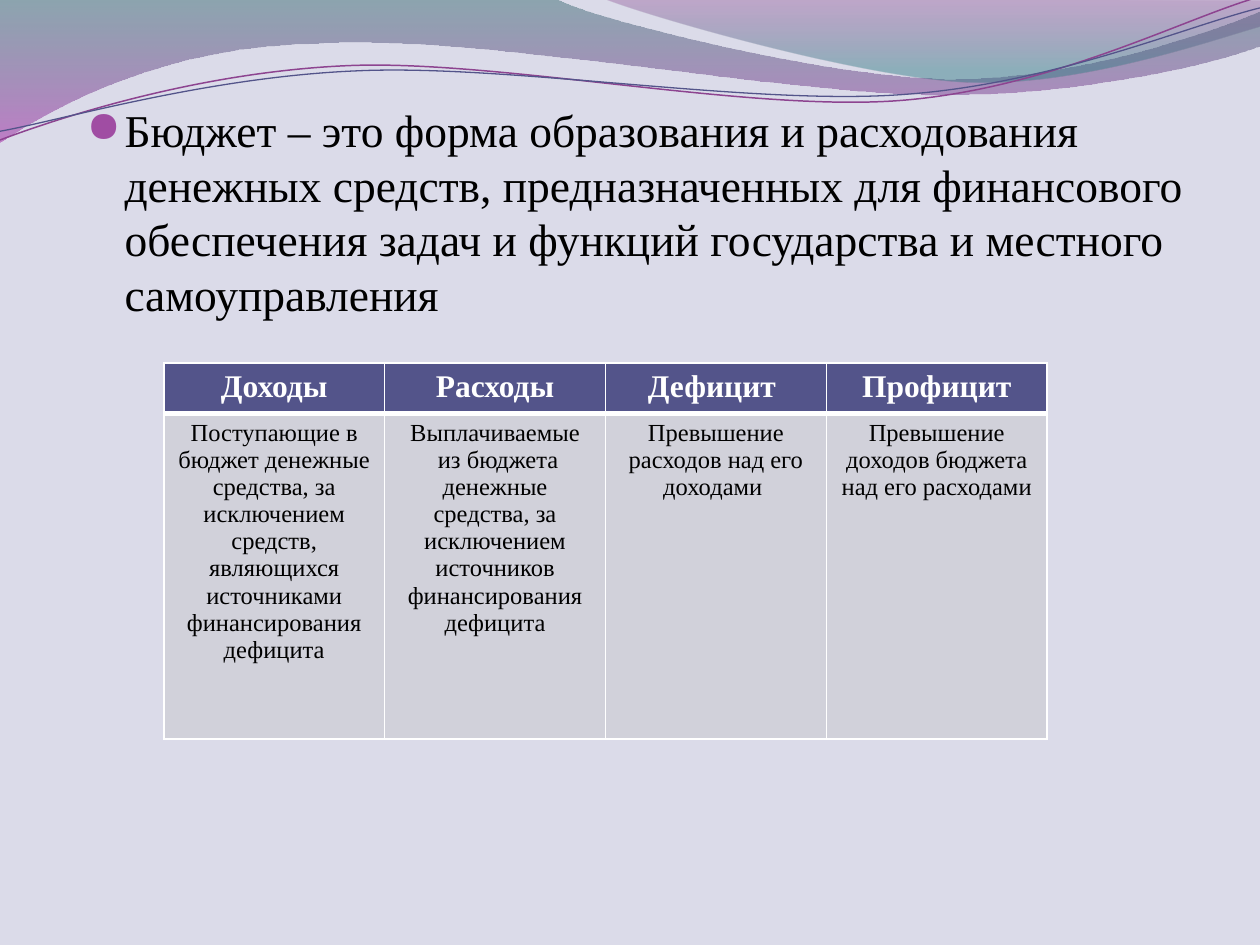
"""Build a slide that defines a budget and tabulates its four key terms."""
from itertools import islice

from pptx import Presentation
from pptx.dml.color import RGBColor
from pptx.enum.text import PP_ALIGN
from pptx.oxml.ns import qn
from pptx.oxml.xmlchemy import OxmlElement
from pptx.util import Pt

CENTER = PP_ALIGN.CENTER
FONT = "Times New Roman"
BACKGROUND, WHITE, BLACK = "DBDBE9", "FFFFFF", "000000"
HEADER_FILL, BODY_FILL, BULLET = "53548A", "D1D1DA", "A04DA3"

DEFINITION = (
    "Бюджет – это форма образования и расходования денежных средств, "
    "предназначенных для финансового обеспечения задач и функций "
    "государства и местного самоуправления"
)
TERMS = [
    ("Доходы", "Поступающие в бюджет денежные средства, за исключением средств, "
               "являющихся источниками финансирования дефицита"),
    ("Расходы", "Выплачиваемые\n из бюджета денежные средства, за исключением "
                "источников финансирования дефицита"),
    ("Дефицит ", "Превышение расходов над его доходами "),
    ("Профицит", "Превышение доходов бюджета над его расходами"),
]
TABLE_LEFT, TABLE_TOP, COLUMN_WIDTH = 93.6, 207.4, 126.2
ROWS = [
    {"height": 27.5, "size": 18, "bold": True, "color": WHITE, "fill": HEADER_FILL, "bottom": 3},
    {"height": 186, "size": 14, "bold": False, "color": BLACK, "fill": BODY_FILL, "bottom": 1},
]

BANDS = [
    {"start": (0, 0),
     "segments": [(317, -1), (343, 12, 478, 45, 546, 45), (614, 45, 690, 19, 720, 6.5),
                  (720.5, 26), (708, 32, 626, 54.5, 537, 54), (448, 54, 275, 20, 185, 24.5),
                  (93, 26, 33, 60, -0.5, 81.5)],
     "stops": [(0, "2D6368", 45), (1, "A530A9", 55)]},
    {"start": (345, -1),
     "segments": [(366.5, 8, 491, 44.5, 553.5, 47), (616.5, 49.5, 692, 23, 720, 15), (720, 0)],
     "stops": [(0, "7F2F82", 30), (0.8, "2F7B82", 45)]},
]
WAVES = [
    {"start": (0, 80),
     "segments": [(34.5, 67, 114, 41, 199.5, 37.5), (284.5, 34, 427, 64, 513.5, 57.5),
                  (600, 51, 675.5, 11, 718.5, -1.5)],
     "color": "8D4490", "width": 0.85},
    {"start": (0, 75),
     "segments": [(34, 69, 118, 44, 204, 40.5), (290, 36.5, 430, 60.5, 516, 54),
                  (602, 48, 677.5, 15, 720, 4.5)],
     "color": "53548A", "width": 0.75},
]


def rgb(value):
    return RGBColor.from_string(value)


def child(parent, tag, **attributes):
    element = OxmlElement(tag)
    for name, value in attributes.items():
        element.set(name, str(value))
    parent.append(element)
    return element


def add_curve(page, start, segments, close):
    builder = page.shapes.build_freeform(Pt(start[0]), Pt(start[1]))
    points = [(Pt(x), Pt(y)) for segment in segments
              for x, y in zip(segment[::2], segment[1::2])]
    builder.add_line_segments(points, close=close)
    shape = builder.convert_to_shape()
    shape.shadow.inherit = False
    lines = iter(list(shape._element.iter(qn("a:lnTo"))))
    for segment in segments:
        group = list(islice(lines, len(segment) // 2))
        if len(group) == 3:
            curve = OxmlElement("a:cubicBezTo")
            group[0].addprevious(curve)
            for line in group:
                curve.append(line[0])
                line.getparent().remove(line)
    return shape


def add_band(page, band):
    shape = add_curve(page, band["start"], band["segments"], True)
    shape.line.fill.background()
    shape.fill.gradient()
    shape.fill.gradient_angle = 270
    for stop, (position, color, _) in zip(shape.fill.gradient_stops, band["stops"]):
        stop.position = position
        stop.color.rgb = rgb(color)
    colors = shape._element.spPr.iter(qn("a:srgbClr"))
    for element, (_, _, opacity) in zip(list(colors), band["stops"]):
        child(element, "a:alpha", val=opacity * 1000)


def add_wave(page, wave):
    shape = add_curve(page, wave["start"], wave["segments"], False)
    shape.fill.background()
    shape.line.color.rgb = rgb(wave["color"])
    shape.line.width = Pt(wave["width"])


def style_text(paragraph, size, color, bold=False):
    for span in paragraph.runs:
        span.font.name = FONT
        span.font.size = Pt(size)
        span.font.bold = bold
        span.font.color.rgb = rgb(color)


def add_definition(page):
    box = page.shapes.add_textbox(Pt(42.5), Pt(54.7), Pt(648), Pt(442))
    box.text_frame.word_wrap = True
    paragraph = box.text_frame.paragraphs[0]
    paragraph.text = DEFINITION
    paragraph.line_spacing = Pt(31.2)
    style_text(paragraph, 26, BLACK)
    properties = paragraph._p.get_or_add_pPr()
    properties.set("marL", str(Pt(21.6)))
    properties.set("indent", str(Pt(-21.6)))
    child(child(properties, "a:buClr"), "a:srgbClr", val=BULLET)
    child(properties, "a:buSzPct", val=95000)
    child(properties, "a:buChar", char="●")


def style_cell(cell, row):
    properties = cell._tc.get_or_add_tcPr()
    for side, width in (("L", 1), ("R", 1), ("T", 1), ("B", row["bottom"])):
        border = child(properties, f"a:ln{side}", w=Pt(width))
        child(child(border, "a:solidFill"), "a:srgbClr", val=WHITE)
    cell.fill.solid()
    cell.fill.fore_color.rgb = rgb(row["fill"])
    for paragraph in cell.text_frame.paragraphs:
        paragraph.alignment = CENTER
        style_text(paragraph, row["size"], row["color"], row["bold"])


def add_terms(page):
    height = sum(row["height"] for row in ROWS)
    table = page.shapes.add_table(
        len(ROWS), len(TERMS), Pt(TABLE_LEFT), Pt(TABLE_TOP),
        Pt(COLUMN_WIDTH * len(TERMS)), Pt(height)).table
    table.horz_banding = False
    for row_index, row in enumerate(ROWS):
        table.rows[row_index].height = Pt(row["height"])
        for column_index, term in enumerate(TERMS):
            table.columns[column_index].width = Pt(COLUMN_WIDTH)
            cell = table.cell(row_index, column_index)
            cell.text_frame.text = term[row_index]
            style_cell(cell, row)


def main():
    deck = Presentation()
    deck.slide_width, deck.slide_height = Pt(720), Pt(540)
    page = deck.slides.add_slide(deck.slide_layouts[6])
    page.background.fill.solid()
    page.background.fill.fore_color.rgb = rgb(BACKGROUND)
    for band in BANDS:
        add_band(page, band)
    for wave in WAVES:
        add_wave(page, wave)
    add_definition(page)
    add_terms(page)
    deck.save("out.pptx")


if __name__ == "__main__":
    main()
